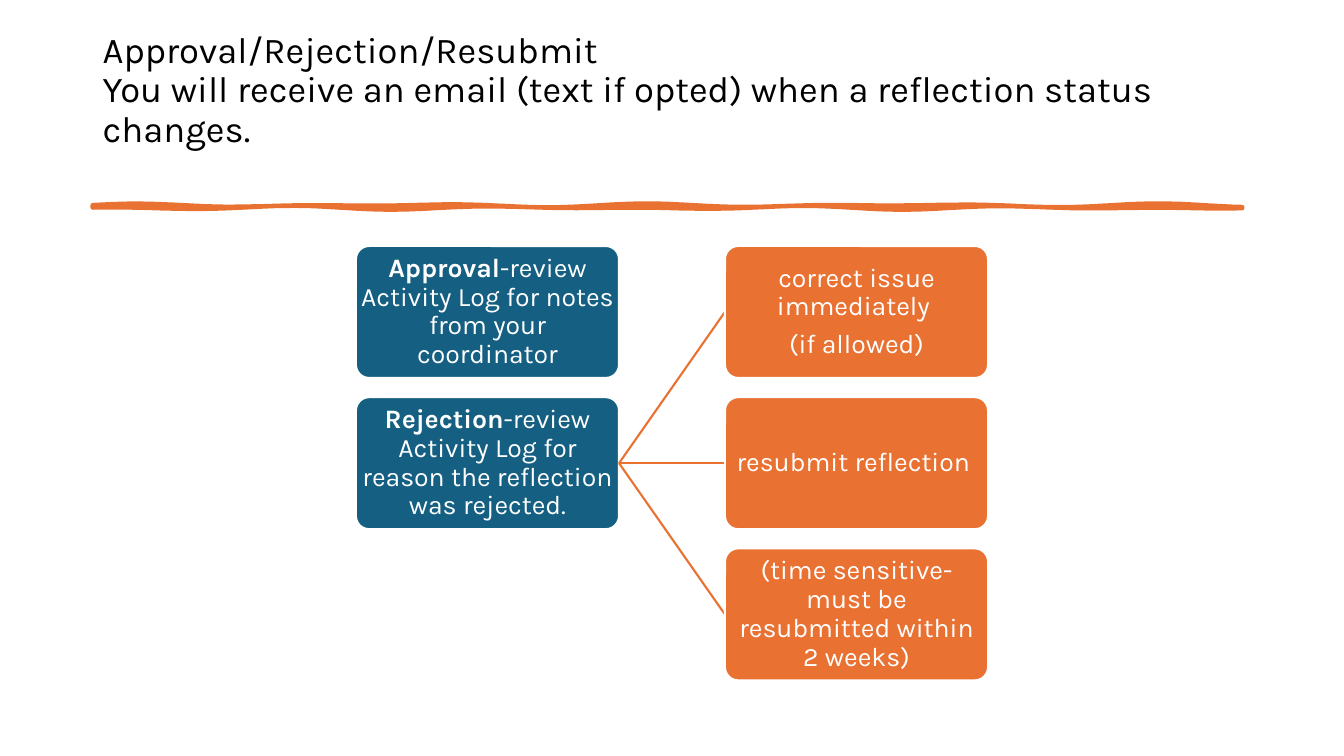
"""Build the slide on approval, rejection and resubmission of reflections."""
import dataclasses
import math

import lxml.etree
import pptx
import pptx.dml.color
import pptx.enum.shapes
import pptx.enum.text
import pptx.oxml.ns
import pptx.util

Inches = pptx.util.Inches

COLORS = {
    "black": "000000",
    "white": "FFFFFF",
    "blue": "156082",
    "orange": "E97132",
}
FONT = "Karla"
TITLE_SIZE, BOX_TEXT_SIZE = 26, 19
TITLE_TEXT = (
    "Approval/Rejection/Resubmit\n"
    "You will receive an email (text if opted) when a reflection status changes."
)

BOX_WIDTH, BOX_HEIGHT = 2.61, 1.31
GRID_LEFT, GRID_TOP = 3.53, 2.44
COLUMN_PITCH, ROW_PITCH = 3.66, 1.5
RIGHT_SIDE, LEFT_SIDE = 3, 1

RULE_LEFT, RULE_WIDTH, RULE_MIDDLE = 0.92, 11.4, 2.05
RULE_STEPS = 114
RULE_UNITS_PER_INCH = 1000
SWAY_HEIGHT, SWAY_PERIOD = 0.01, 1.7
HALF_THICKNESS, SWELL_HEIGHT, SWELL_PERIOD, FIRST_SWELL = 0.01, 0.01, 2.5, 1.5


@dataclasses.dataclass
class Box:
    column: int
    row: int
    color: str
    paragraphs: list[str]
    lead: str = ""


APPROVAL = Box(0, 0, "blue", ["-review Activity Log for notes from your coordinator"], "Approval")
REJECTION = Box(
    0, 1, "blue", ["-review Activity Log for reason the reflection was rejected."], "Rejection"
)
FOLLOW_UP_TEXTS = [
    ["correct issue immediately ", "(if allowed)"],
    ["resubmit reflection "],
    ["(time sensitive-must be resubmitted within 2 weeks)"],
]


def rgb(name: str) -> pptx.dml.color.RGBColor:
    return pptx.dml.color.RGBColor.from_string(COLORS[name])


def write_text(
    frame, paragraphs: list[str], *, size: float, color: str, align: str,
    lead: str = "", space_after: float = 0,
) -> None:
    frame.word_wrap = True
    frame.vertical_anchor = pptx.enum.text.MSO_ANCHOR.MIDDLE
    for index, text in enumerate(paragraphs):
        paragraph = frame.add_paragraph() if index else frame.paragraphs[0]
        paragraph.alignment = pptx.enum.text.PP_ALIGN[align]
        paragraph.line_spacing = 0.9
        paragraph.space_after = pptx.util.Pt(space_after)
        if lead and index == 0:
            lead_run = paragraph.add_run()
            lead_run.text = lead
            lead_run.font.bold = True
        for line_index, line in enumerate(text.split("\n")):
            if line_index:
                paragraph.add_line_break()
            paragraph.add_run().text = line
        for run in paragraph.runs:
            run.font.name = FONT
            run.font.size = pptx.util.Pt(size)
            run.font.color.rgb = rgb(color)


def style_shape(shape, *, fill: str, line: str, line_width: float) -> None:
    shape.shadow.inherit = False
    shape.fill.solid()
    shape.fill.fore_color.rgb = rgb(fill)
    shape.line.color.rgb = rgb(line)
    shape.line.width = pptx.util.Pt(line_width)


def add_title(slide) -> None:
    title = slide.shapes.add_textbox(Inches(0.92), Inches(0.4), Inches(11.5), Inches(1.45))
    title.text_frame.margin_bottom = Inches(0.49)
    write_text(title.text_frame, [TITLE_TEXT], size=TITLE_SIZE, color="black", align="LEFT")


def rule_edge(side: int) -> list[tuple[float, float]]:
    points = []
    for step in range(RULE_STEPS + 1):
        x = RULE_LEFT + RULE_WIDTH * step / RULE_STEPS
        sway = SWAY_HEIGHT * math.sin(math.tau * x / SWAY_PERIOD)
        swell = SWELL_HEIGHT * math.cos(math.tau * (x - FIRST_SWELL) / SWELL_PERIOD)
        y = RULE_MIDDLE + sway + side * (HALF_THICKNESS + swell)
        points.append((x * RULE_UNITS_PER_INCH, y * RULE_UNITS_PER_INCH))
    return points


def add_wavy_rule(slide) -> None:
    first, *others = rule_edge(-1) + rule_edge(1)[::-1]
    builder = slide.shapes.build_freeform(*first, scale=Inches(1) / RULE_UNITS_PER_INCH)
    builder.add_line_segments(others, close=True)
    style_shape(builder.convert_to_shape(), fill="orange", line="orange", line_width=3.25)


def add_box(slide, box: Box):
    shape = slide.shapes.add_shape(
        pptx.enum.shapes.MSO_SHAPE.ROUNDED_RECTANGLE,
        Inches(GRID_LEFT + box.column * COLUMN_PITCH),
        Inches(GRID_TOP + box.row * ROW_PITCH),
        Inches(BOX_WIDTH),
        Inches(BOX_HEIGHT),
    )
    shape.adjustments[0] = 0.1
    style_shape(shape, fill=box.color, line="white", line_width=1.5)
    frame = shape.text_frame
    frame.margin_left = frame.margin_right = Inches(0.01)
    frame.margin_top = frame.margin_bottom = Inches(0.01)
    write_text(
        frame, box.paragraphs, size=BOX_TEXT_SIZE, color="white", align="CENTER",
        lead=box.lead, space_after=0.35 * BOX_TEXT_SIZE,
    )
    return shape


def add_branch(slide, source, target: Box) -> None:
    connector = slide.shapes.add_connector(
        pptx.enum.shapes.MSO_CONNECTOR.STRAIGHT, 0, 0, 0, 0
    )
    connector.line.color.rgb = rgb("orange")
    connector.line.width = pptx.util.Pt(1.5)
    lxml.etree.SubElement(connector._element.spPr, pptx.oxml.ns.qn("a:effectLst"))
    connector.begin_connect(source, RIGHT_SIDE)
    connector.end_connect(add_box(slide, target), LEFT_SIDE)


def main() -> None:
    presentation = pptx.Presentation()
    presentation.slide_width = Inches(13.33)
    presentation.slide_height = Inches(7.5)
    slide = presentation.slides.add_slide(presentation.slide_layouts[6])
    add_title(slide)
    add_wavy_rule(slide)
    add_box(slide, APPROVAL)
    rejection = add_box(slide, REJECTION)
    for row, paragraphs in enumerate(FOLLOW_UP_TEXTS):
        add_branch(slide, rejection, Box(1, row, "orange", paragraphs))
    presentation.save("out.pptx")


if __name__ == "__main__":
    main()
